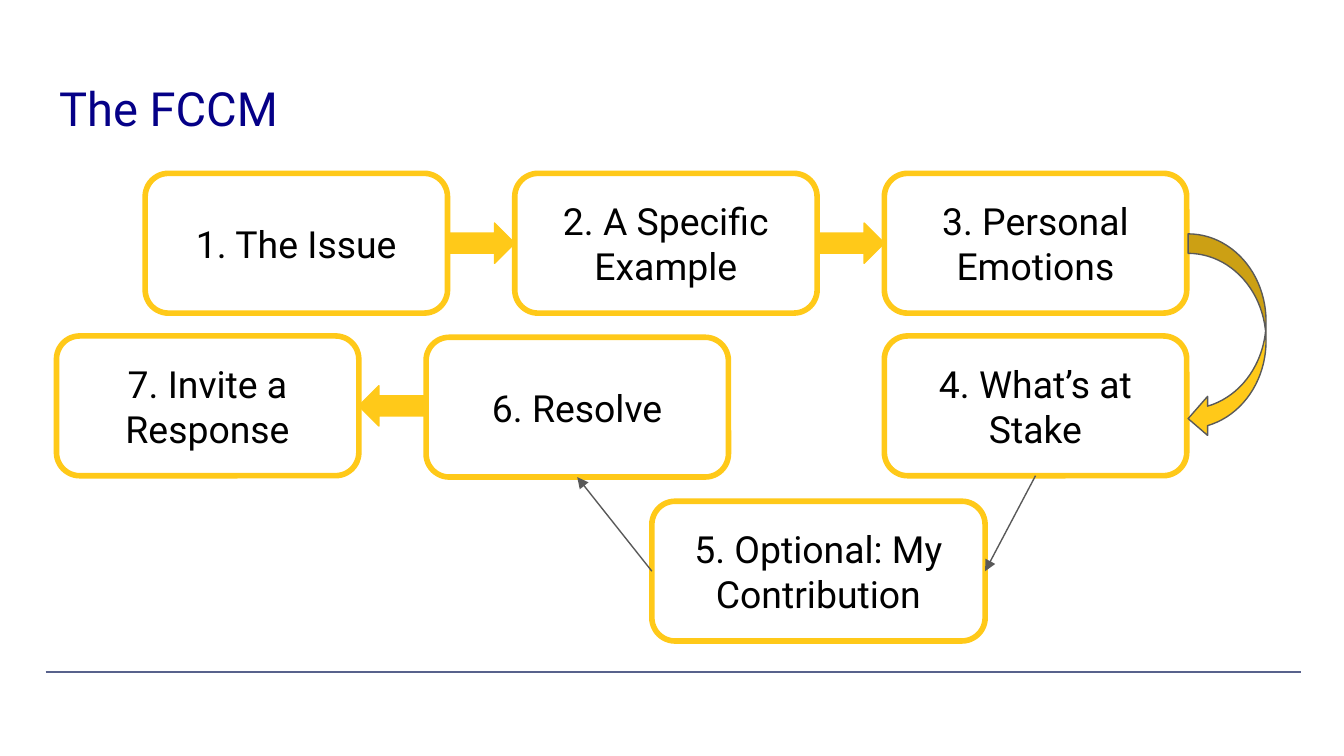
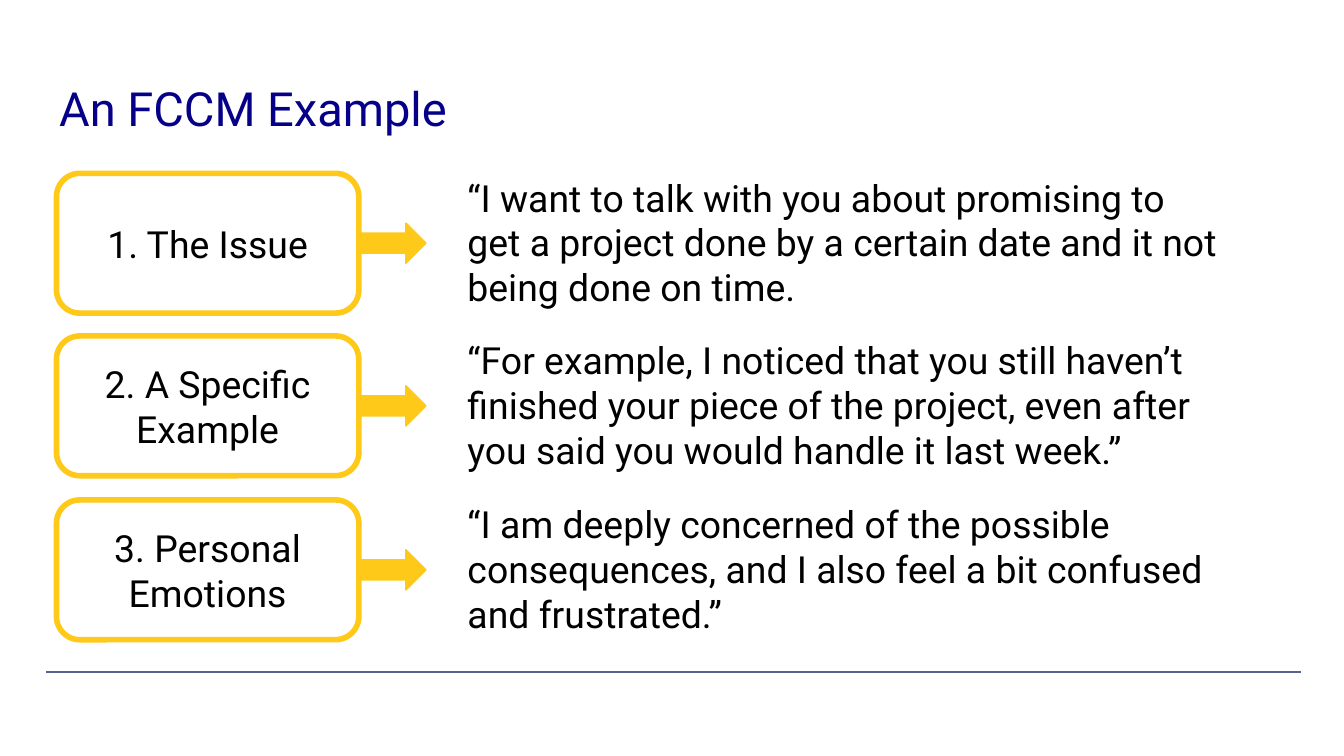
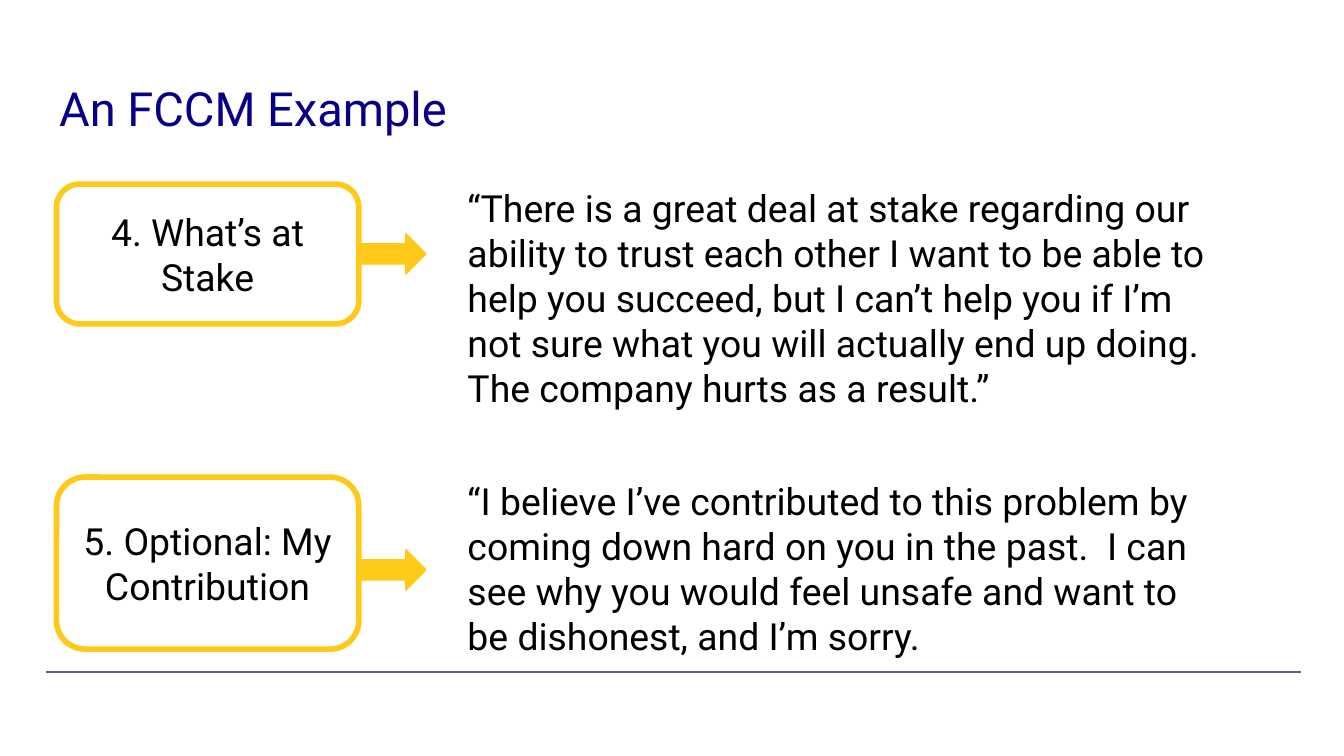
from lxml import etree
from pptx import Presentation
from pptx.dml.color import RGBColor
from pptx.enum.shapes import MSO_CONNECTOR, MSO_SHAPE
from pptx.enum.text import MSO_ANCHOR, MSO_AUTO_SIZE, PP_ALIGN
from pptx.oxml.ns import qn
from pptx.util import Pt

PX = 9144
SLIDE_WIDTH = 1000 * PX
SLIDE_HEIGHT = SLIDE_WIDTH * 9 // 16
FONT = "Roboto"
COLORS = {
    "title": "050087",
    "text": "000000",
    "accent": "FFC919",
    "rule": "58628C",
    "link": "595959",
}
STRAIGHT = MSO_CONNECTOR.STRAIGHT
ROUNDED = MSO_SHAPE.ROUNDED_RECTANGLE
RIGHT_ARROW = MSO_SHAPE.RIGHT_ARROW
CURVED_ARROW = MSO_SHAPE.CURVED_LEFT_ARROW
LEFT, CENTER = PP_ALIGN.LEFT, PP_ALIGN.CENTER
TOP, MIDDLE = MSO_ANCHOR.TOP, MSO_ANCHOR.MIDDLE
NO_FIT, GROW = MSO_AUTO_SIZE.NONE, MSO_AUTO_SIZE.SHAPE_TO_FIT_TEXT
LEFT_SIDE, BOTTOM_SIDE, RIGHT_SIDE = 1, 2, 3

BOX_WIDTH, BOX_HEIGHT = 225, 104
ARROW_WIDTH, ARROW_HEIGHT = 50, 30
MARGIN = 42
TOP_ROW, MIDDLE_ROW, BOTTOM_ROW = 129, 250, 372
FIRST_COLUMN, COLUMN_STEP = 108, 275
QUOTE_LEFT, QUOTE_WIDTH, QUOTE_RISE = 338, 585, 9
QUOTE_PADDING, QUOTE_LINE = 19, 34

STEPS = {
    1: "1. The Issue",
    2: "2. A Specific Example",
    3: "3. Personal Emotions",
    4: "4. What’s at Stake",
    5: "5. Optional: My Contribution",
    6: "6. Resolve",
    7: "7. Invite a Response",
}

LAST_COLUMN = FIRST_COLUMN + 2 * COLUMN_STEP
FLOW_BOXES = {
    1: (FIRST_COLUMN, TOP_ROW, BOX_WIDTH),
    2: (FIRST_COLUMN + COLUMN_STEP, TOP_ROW, BOX_WIDTH),
    3: (LAST_COLUMN, TOP_ROW, BOX_WIDTH),
    4: (LAST_COLUMN, MIDDLE_ROW, BOX_WIDTH),
    5: (485, 373, 248),
    6: (MARGIN + COLUMN_STEP, 251, BOX_WIDTH),
    7: (MARGIN, MIDDLE_ROW, BOX_WIDTH),
}
FLOW_ARROWS = [(1, False), (2, False), (7, True)]
FLOW_LINKS = [(4, BOTTOM_SIDE, 5, RIGHT_SIDE), (5, LEFT_SIDE, 6, BOTTOM_SIDE)]
CURVE = (884, 174, 58, 152)

EXAMPLES = [
    [
        dict(step=1, top=TOP_ROW, lines=3, quote="“I want to talk with you about promising to get a project done by a certain date and it not being done on time."),
        dict(step=2, top=MIDDLE_ROW, lines=3, quote="“For example, I noticed that you still haven’t finished your piece of the project, even after you said you would handle it last week.”"),
        dict(step=3, top=BOTTOM_ROW, lines=3, quote="“I am deeply concerned of the possible consequences, and I also feel a bit confused and frustrated.”"),
    ],
    [
        dict(step=4, top=137, lines=5, quote="“There is a great deal at stake regarding our ability to trust each other I want to be able to help you succeed, but I can’t help you if I’m not sure what you will actually end up doing. The company hurts as a result.”"),
        dict(step=5, top=355, height=128, arrow_drop=54, lines=4, quote="“I believe I’ve contributed to this problem by coming down hard on you in the past.  I can see why you would feel unsafe and want to be dishonest, and I’m sorry."),
    ],
]


def scaled(*lengths):
    return [length * PX for length in lengths]


def color(name):
    return RGBColor.from_string(COLORS[name])


def write(shape, text, size, color_name, align, anchor, fit):
    frame = shape.text_frame
    frame.word_wrap = True
    frame.auto_size = fit
    frame.vertical_anchor = anchor
    frame.margin_left = frame.margin_right = 10 * PX
    frame.margin_top = frame.margin_bottom = 10 * PX
    para = frame.paragraphs[0]
    para.text = text
    para.alignment = align
    para.font.name = FONT
    para.font.size = Pt(size)
    para.font.color.rgb = color(color_name)


def add_line(page, color_name, start=(0, 0), end=(0, 0)):
    line = page.shapes.add_connector(STRAIGHT, *scaled(*start, *end))
    line.line.color.rgb = color(color_name)
    line.line.width = Pt(0.75)
    etree.SubElement(line.element.spPr, qn("a:effectLst"))
    return line


def add_page(deck, layout, title):
    page = deck.slides.add_slide(layout)
    heading = page.shapes.title
    heading.left, heading.top, heading.width, heading.height = scaled(34, 49, 932, 63)
    write(heading, title, 25.2, "title", LEFT, TOP, NO_FIT)
    return page


def add_step(page, step, left, top, width=BOX_WIDTH, height=BOX_HEIGHT):
    box = page.shapes.add_shape(ROUNDED, *scaled(left, top, width, height))
    box.shadow.inherit = False
    box.fill.background()
    box.line.color.rgb = color("accent")
    box.line.width = Pt(3)
    write(box, STEPS[step], 20, "text", CENTER, MIDDLE, NO_FIT)
    return box


def add_arrow(page, left, top, width=ARROW_WIDTH, height=ARROW_HEIGHT,
              kind=RIGHT_ARROW, outline="accent", flipped=False):
    arrow = page.shapes.add_shape(kind, *scaled(left, top, width, height))
    arrow.shadow.inherit = False
    arrow.fill.solid()
    arrow.fill.fore_color.rgb = color("accent")
    arrow.line.color.rgb = color(outline)
    arrow.line.width = Pt(0.75)
    if flipped:
        arrow.element.spPr.find(qn("a:xfrm")).set("flipH", "1")


def add_link(page, source, source_side, target, target_side):
    link = add_line(page, "link")
    link.begin_connect(source, source_side)
    link.end_connect(target, target_side)
    outline = link.element.spPr.find(qn("a:ln"))
    etree.SubElement(outline, qn("a:tailEnd"), type="triangle")


def draw_flow(page):
    boxes = {step: add_step(page, step, *place) for step, place in FLOW_BOXES.items()}
    for step, flipped in FLOW_ARROWS:
        left, top, width = FLOW_BOXES[step]
        drop = (BOX_HEIGHT - ARROW_HEIGHT) // 2
        add_arrow(page, left + width, top + drop, flipped=flipped)
    add_arrow(page, *CURVE, kind=CURVED_ARROW, outline="link")
    for source, source_side, target, target_side in FLOW_LINKS:
        add_link(page, boxes[source], source_side, boxes[target], target_side)


def draw_example(page, rows):
    for row in rows:
        top = row["top"]
        height = row.get("height", BOX_HEIGHT)
        drop = row.get("arrow_drop", (BOX_HEIGHT - ARROW_HEIGHT) // 2)
        add_step(page, row["step"], MARGIN, top, height=height)
        add_arrow(page, MARGIN + BOX_WIDTH, top + drop)
        quote_height = QUOTE_PADDING + QUOTE_LINE * row["lines"]
        quote = page.shapes.add_textbox(
            *scaled(QUOTE_LEFT, top - QUOTE_RISE, QUOTE_WIDTH, quote_height))
        write(quote, row["quote"], 20, "text", LEFT, TOP, GROW)


def main():
    deck = Presentation()
    deck.slide_width, deck.slide_height = SLIDE_WIDTH, SLIDE_HEIGHT
    layout = deck.slide_layouts.get_by_name("Title Only")

    flow_page = add_page(deck, layout, "The FCCM")
    rule = add_line(flow_page, "rule", (34, 500), (968, 500))
    layout.shapes.element.append(rule.element)
    draw_flow(flow_page)

    for rows in EXAMPLES:
        draw_example(add_page(deck, layout, "An FCCM Example"), rows)
    deck.save("out.pptx")


if __name__ == "__main__":
    main()
